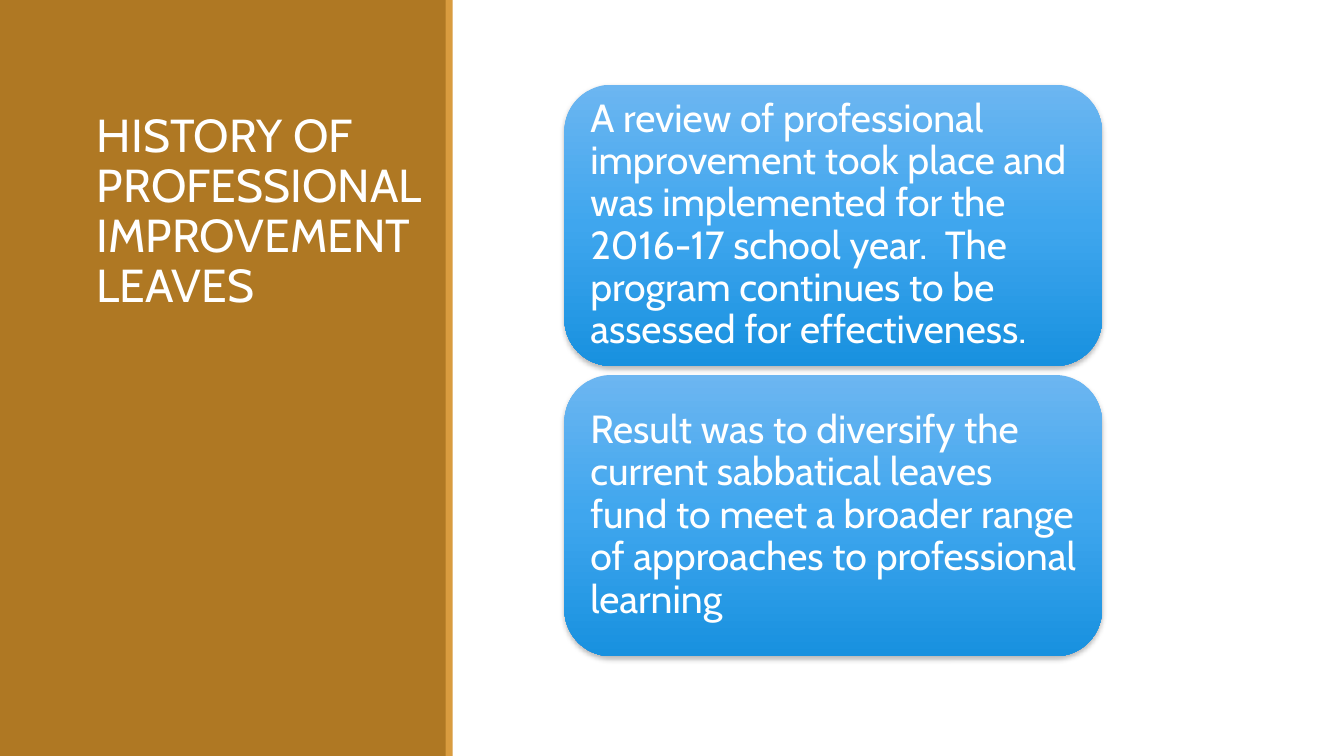
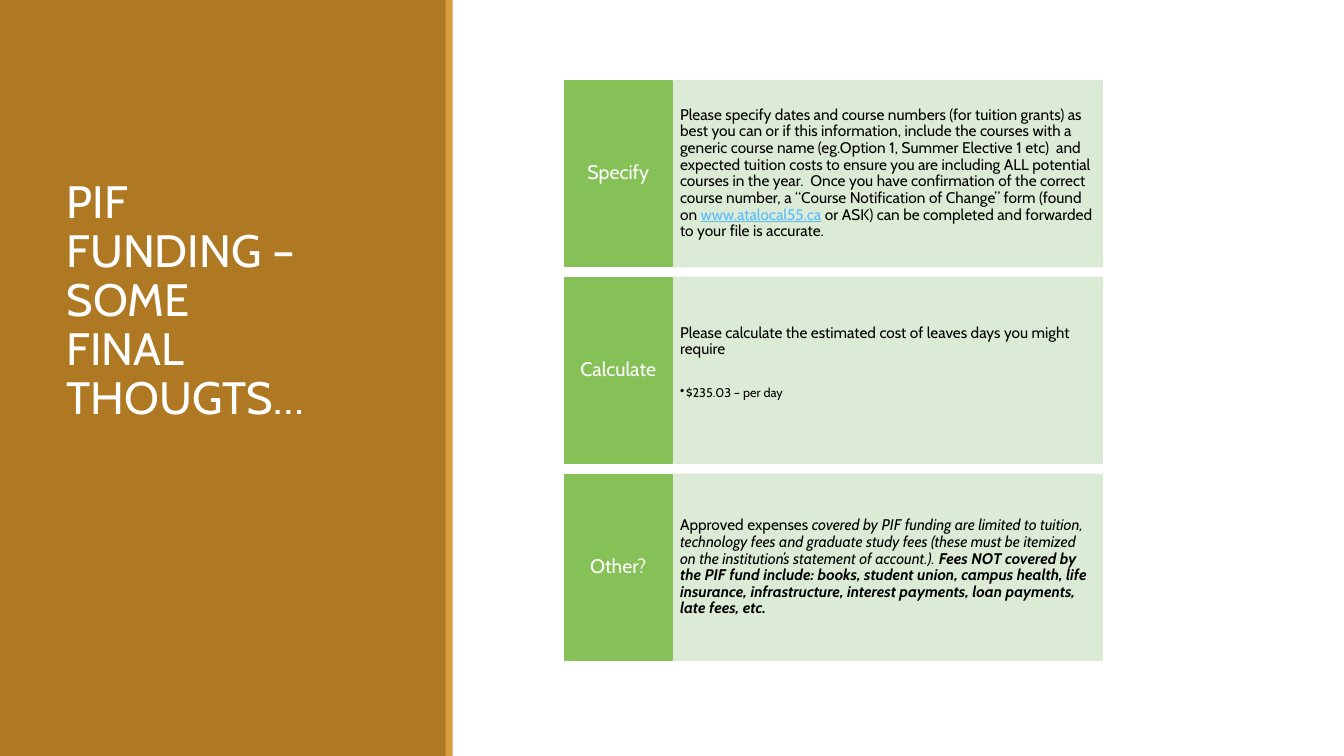
import collections
import copy

import lxml.etree
import pptx
import pptx.dml.color
import pptx.enum.shapes
import pptx.enum.text
import pptx.oxml.ns
import pptx.util

SLIDE_WIDTH = pptx.util.Inches(13.33)
SLIDE_HEIGHT = pptx.util.Inches(7.5)
FONT = "Cabin"
WHITE, BLACK = "FFFFFF", "000000"
PANEL, PANEL_EDGE = "AF7823", "D99C3F"
CARD_GRADIENT = ((0, "6CB6F1"), (0.5, "3FA6EE"), (1, "1891DF"))
LABEL_GREEN, DETAIL_GREEN, LINK_BLUE = "86C157", "D9E9D1", "56BCFE"
LEFT, CENTER = pptx.enum.text.PP_ALIGN.LEFT, pptx.enum.text.PP_ALIGN.CENTER
TOP = pptx.enum.text.MSO_ANCHOR.TOP
MIDDLE = pptx.enum.text.MSO_ANCHOR.MIDDLE
BOTTOM = pptx.enum.text.MSO_ANCHOR.BOTTOM
RECTANGLE = pptx.enum.shapes.MSO_SHAPE.RECTANGLE
ROUNDED = pptx.enum.shapes.MSO_SHAPE.ROUNDED_RECTANGLE

Box = collections.namedtuple("Box", "left top width height")


def percent_box(left, top, width, height):
    return Box(
        round(SLIDE_WIDTH * left / 100),
        round(SLIDE_HEIGHT * top / 100),
        round(SLIDE_WIDTH * width / 100),
        round(SLIDE_HEIGHT * height / 100),
    )


def split_rows(box, count, gap_percent):
    gap = SLIDE_HEIGHT * gap_percent / 100
    height = (box.height - gap * (count - 1)) / count
    return [
        Box(box.left, round(box.top + row * (height + gap)), box.width, round(height))
        for row in range(count)
    ]


def split_columns(box, share):
    first = round(box.width * share)
    return (
        box._replace(width=first),
        box._replace(left=box.left + first, width=box.width - first),
    )


def color(hex_string):
    return pptx.dml.color.RGBColor.from_string(hex_string)


def add_block(slide, box, preset, fill=None, outlined=False):
    shape = slide.shapes.add_shape(preset, *box)
    shape.shadow.inherit = False
    if fill:
        shape.fill.solid()
        shape.fill.fore_color.rgb = color(fill)
    if outlined:
        shape.line.color.rgb = color(fill)
        shape.line.width = pptx.util.Pt(1.25)
    else:
        shape.line.fill.background()
    return shape


def format_frame(frame, anchor, side=0.1, upright=0.05):
    frame.word_wrap = True
    frame.auto_size = pptx.enum.text.MSO_AUTO_SIZE.NONE
    frame.vertical_anchor = anchor
    frame.margin_left = frame.margin_right = pptx.util.Inches(side)
    frame.margin_top = frame.margin_bottom = pptx.util.Inches(upright)


def format_paragraph(paragraph, size, hex_string, alignment=LEFT):
    paragraph.alignment = alignment
    paragraph.line_spacing = 0.9
    paragraph.font.name = FONT
    paragraph.font.size = pptx.util.Pt(size)
    paragraph.font.color.rgb = color(hex_string)


def add_bullet(paragraph):
    properties = paragraph._p.get_or_add_pPr()
    indent = pptx.util.Inches(0.06)
    properties.set("marL", str(indent))
    properties.set("indent", str(-indent))
    bullet = lxml.etree.SubElement(properties, pptx.oxml.ns.qn("a:buChar"))
    bullet.set("char", "•")


def add_soft_shadow(shape):
    effects = shape.element.spPr.find(pptx.oxml.ns.qn("a:effectLst"))
    shadow = lxml.etree.SubElement(effects, pptx.oxml.ns.qn("a:outerShdw"))
    shadow.set("blurRad", str(pptx.util.Pt(4)))
    shadow.set("dist", str(pptx.util.Pt(2)))
    shadow.set("dir", "5400000")
    shadow.set("rotWithShape", "0")
    shade = lxml.etree.SubElement(shadow, pptx.oxml.ns.qn("a:srgbClr"), val=BLACK)
    lxml.etree.SubElement(shade, pptx.oxml.ns.qn("a:alpha"), val="28000")


def set_opacity(shape, percent):
    for shade in shape.element.spPr.iter(pptx.oxml.ns.qn("a:srgbClr")):
        lxml.etree.SubElement(
            shade, pptx.oxml.ns.qn("a:alpha"), val=str(percent * 1000)
        )


def fill_gradient(shape, stops):
    shape.fill.gradient()
    shape.fill.gradient_angle = 270
    stop_list = shape.element.spPr.find(".//" + pptx.oxml.ns.qn("a:gsLst"))
    stop_list.insert(1, copy.deepcopy(stop_list[0]))
    for stop, (position, hex_string) in zip(shape.fill.gradient_stops, stops):
        stop.position = position
        stop.color.rgb = color(hex_string)


def add_side_panel(layout, slide):
    bands = (
        (percent_box(0, 0, 33.2, 100), PANEL),
        (percent_box(33.16, 0, 0.53, 100), PANEL_EDGE),
    )
    for index, (box, fill) in enumerate(bands):
        band = add_block(slide, box, RECTANGLE, fill)
        band.element.nvSpPr.cNvPr.set("id", str(100 + index))
        layout.shapes.element.insert(2 + index, band.element)


def add_title(slide, box, text, size):
    title = slide.shapes.title
    title.left, title.top, title.width, title.height = box
    title.text_frame.text = text
    format_frame(title.text_frame, BOTTOM)
    format_paragraph(title.text_frame.paragraphs[0], size, WHITE)


def add_cards(slide, box, texts):
    for row, text in zip(split_rows(box, len(texts), 1.2), texts):
        card = add_block(slide, row, ROUNDED)
        fill_gradient(card, CARD_GRADIENT)
        add_soft_shadow(card)
        card.text_frame.text = text
        format_frame(card.text_frame, MIDDLE, 0.12, 0.12)
        format_paragraph(card.text_frame.paragraphs[0], 28, WHITE)


def add_detail(slide, box, runs, bullet):
    detail = add_block(slide, box, RECTANGLE, DETAIL_GREEN, outlined=True)
    set_opacity(detail, 90)
    frame = detail.text_frame
    format_frame(frame, TOP if bullet else MIDDLE, 0.08, 0.47)
    paragraph = frame.paragraphs[0]
    format_paragraph(paragraph, 11, BLACK)
    for text, style in runs:
        run = paragraph.add_run()
        run.text = text
        if "italic" in style:
            run.font.italic = True
        if "bold" in style:
            run.font.bold = True
        if "link" in style:
            run.font.underline = True
            run.font.color.rgb = color(LINK_BLUE)
    if bullet:
        item = frame.add_paragraph()
        item.text = bullet
        item.level = 1
        add_bullet(item)
        item.space_before = pptx.util.Pt(20)
        format_paragraph(item, 9, BLACK)


def add_labelled_rows(slide, box, entries):
    for row, (name, runs, bullet) in zip(split_rows(box, len(entries), 1.47), entries):
        label_box, detail_box = split_columns(row, 0.2)
        add_detail(slide, detail_box, runs, bullet)
        label = add_block(slide, label_box, RECTANGLE, LABEL_GREEN, outlined=True)
        label.text_frame.text = name
        format_frame(label.text_frame, MIDDLE, 0.06, 0.18)
        format_paragraph(label.text_frame.paragraphs[0], 14, WHITE, CENTER)


HISTORY_CARDS = (
    "A review of professional improvement took place and was implemented for the "
    "2016-17 school year.  The program continues to be assessed for effectiveness.",
    "Result was to diversify the current sabbatical leaves fund to meet a broader "
    "range of approaches to professional learning",
)

FUNDING_LINES = ("PIF", "FUNDING – ", "SOME", "FINAL", "THOUGTS…")

FUNDING_ROWS = (
    (
        "Specify",
        (
            (
                "Please specify dates and course numbers (for tuition grants) as best "
                "you can or if this information, include the courses with a generic "
                "course name (eg.Option 1, Summer Elective 1 etc)  and expected tuition "
                "costs to ensure you are including ALL potential courses in the year.  "
                "Once you have confirmation of the correct course number, a “Course "
                "Notification of Change” form (found on ",
                "",
            ),
            ("www.atalocal55.ca", "link"),
            (" or ASK) can be completed and forwarded to your file is accurate.", ""),
        ),
        None,
    ),
    (
        "Calculate",
        (("Please calculate the estimated cost of leaves days you might require", ""),),
        "$235.03 – per day",
    ),
    (
        "Other?",
        (
            ("Approved expenses ", ""),
            (
                "covered by PIF funding are limited to tuition, technology fees and "
                "graduate study fees (these must be itemized on the institution’s "
                "statement of account.). ",
                "italic",
            ),
            (
                "Fees NOT covered by the PIF fund include: books, student union, campus "
                "health, life insurance, infrastructure, interest payments, loan "
                "payments, late fees, etc.",
                "bold italic",
            ),
        ),
        None,
    ),
)


def main():
    presentation = pptx.Presentation()
    presentation.slide_width = SLIDE_WIDTH
    presentation.slide_height = SLIDE_HEIGHT
    layout = presentation.slide_layouts[5]

    history = presentation.slides.add_slide(layout)
    add_side_panel(layout, history)
    add_title(
        history,
        percent_box(6.45, 8.67, 28.58, 33.33),
        "HISTORY OF PROFESSIONAL IMPROVEMENT LEAVES",
        33,
    )
    add_cards(history, percent_box(42, 11.2, 40, 75.6), HISTORY_CARDS)

    funding = presentation.slides.add_slide(layout)
    add_title(
        funding,
        percent_box(4.2, 23.47, 29.18, 33.33),
        "\v".join(FUNDING_LINES),
        32.4,
    )
    add_labelled_rows(funding, percent_box(42, 10.67, 40, 76.67), FUNDING_ROWS)

    presentation.save("out.pptx")


if __name__ == "__main__":
    main()
